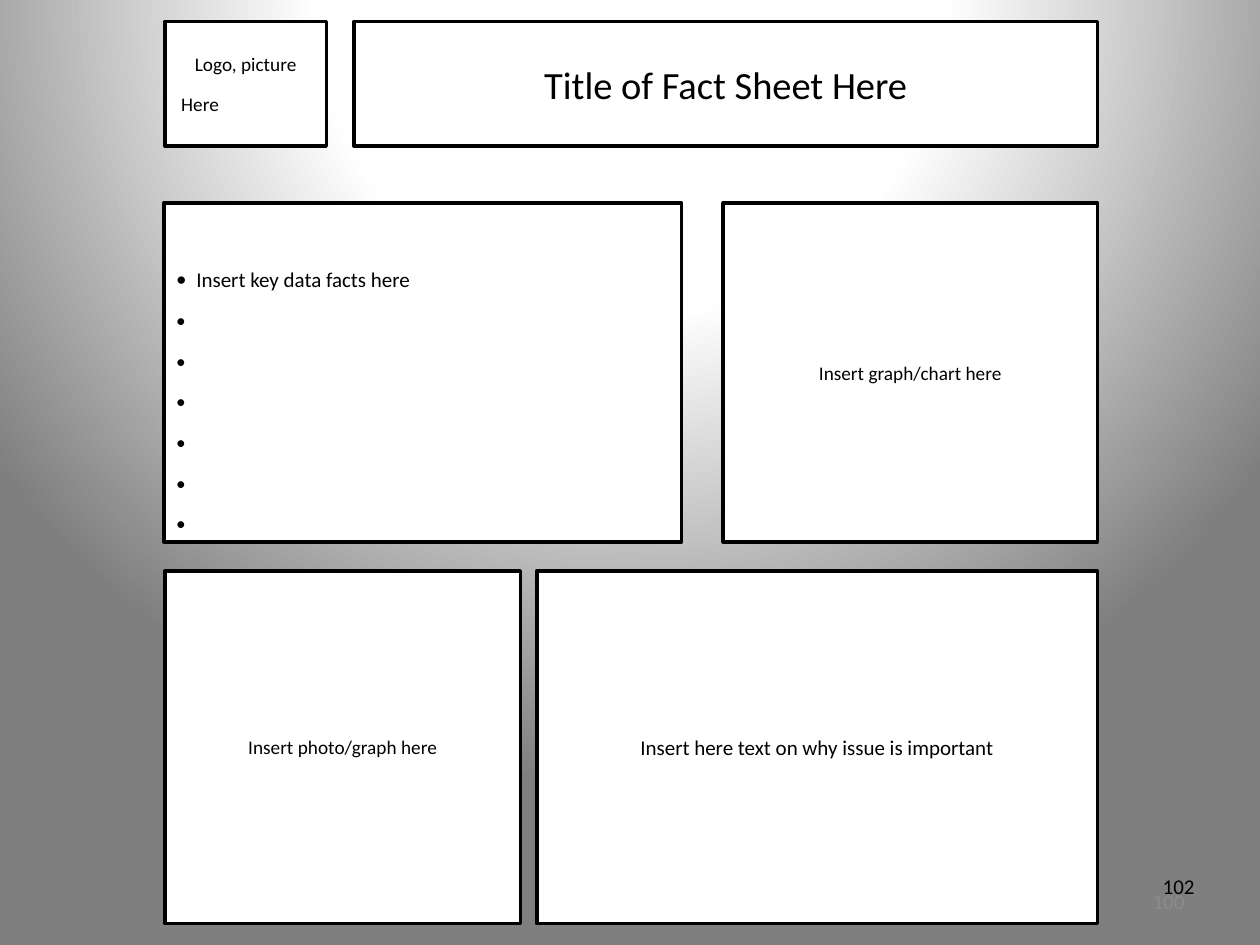
from dataclasses import dataclass
from lxml.etree import SubElement
from pptx import Presentation
from pptx.dml.color import RGBColor
from pptx.enum.shapes import MSO_SHAPE
from pptx.enum.text import MSO_ANCHOR, MSO_AUTO_SIZE, PP_ALIGN
from pptx.oxml import parse_xml
from pptx.oxml.ns import nsdecls, qn
from pptx.util import Inches, Pt


@dataclass(frozen=True)
class Theme:
    """Hold the colours, type sizes and line width."""
    font: str = "Calibri"
    ink: str = "000000"
    paper: str = "FFFFFF"
    faint: str = "8C8C8C"
    stops: tuple = ((0, "FFFFFF"), (40, "FEFEFE"), (100, "7F7F7F"))
    title: int = 22
    body: int = 12
    small: int = 11
    gap: int = 10
    line: int = 2


THEME = Theme()
WIDE, HIGH = Inches(10), Inches(7.5)
LEFT, RIGHT = 0.131, 0.871
HEAD, MID, FOOT = (0.0227, 0.132), (0.2147, 0.3587), (0.604, 0.3733)


def area(left, right, row):
    """Turn shares of the slide into a left, top, width and height."""
    top, tall = row
    return [round(n) for n in (left * WIDE, top * HIGH, (right - left) * WIDE, tall * HIGH)]


def paint(slide):
    """Fill the background with a round gradient centred above the slide."""
    slide.background.fill.solid()
    stops = "".join(
        f'<a:gs pos="{pos * 1000}"><a:srgbClr val="{tone}"/></a:gs>'
        for pos, tone in THEME.stops)
    grad = parse_xml(
        f'<a:gradFill {nsdecls("a")} rotWithShape="1"><a:gsLst>{stops}</a:gsLst>'
        '<a:path path="circle"><a:fillToRect l="50000" t="-80000" r="50000" b="180000"/>'
        '</a:path></a:gradFill>')
    back = slide.element.find(".//" + qn("p:bgPr"))
    back.replace(back[0], grad)


def style(shape):
    """Give a box its white fill and black outline."""
    shape.fill.solid()
    shape.fill.fore_color.rgb = RGBColor.from_string(THEME.paper)
    shape.line.color.rgb = RGBColor.from_string(THEME.ink)
    shape.line.width = Pt(THEME.line)


def setup(shape, anchor=MSO_ANCHOR.MIDDLE):
    """Prepare and return the text frame of a shape."""
    frame = shape.text_frame
    frame.word_wrap = True
    frame.auto_size = MSO_AUTO_SIZE.NONE
    frame.vertical_anchor = anchor
    return frame


def write(para, text, size, align=PP_ALIGN.CENTER, tone=THEME.ink, gap=THEME.gap):
    """Add one run to a paragraph and format both."""
    para.alignment = align
    para.space_after = Pt(gap)
    run = para.add_run()
    run.text = text
    run.font.name = THEME.font
    run.font.size = Pt(size)
    run.font.color.rgb = RGBColor.from_string(tone)


def panel(slide, left, right, row, anchor=MSO_ANCHOR.MIDDLE):
    """Draw an outlined panel and return its text frame."""
    shape = slide.shapes.add_shape(MSO_SHAPE.RECTANGLE, *area(left, right, row))
    shape.shadow.inherit = False
    style(shape)
    return setup(shape, anchor)


def indent(para, margin, hang=0):
    """Set the left margin and first line of a paragraph."""
    props = para._p.get_or_add_pPr()
    props.set("marL", str(Inches(margin)))
    props.set("indent", str(-Inches(hang)))
    return props


def facts(frame, items):
    """Write a bulleted list in which open items keep their bullet."""
    for num, text in enumerate(items):
        para = frame.add_paragraph() if num else frame.paragraphs[0]
        props = indent(para, 0.16, 0.16)
        SubElement(props, qn("a:buFont")).set("typeface", THEME.font)
        SubElement(props, qn("a:buChar")).set("char", "•")
        size = THEME.body if text.strip() else THEME.small
        write(para, text, size, PP_ALIGN.LEFT)


def number(slide, text, left, right, top, align, tone):
    """Place a page number."""
    box = slide.shapes.add_textbox(*area(left, right, (top, 0.0533)))
    write(setup(box).paragraphs[0], text, THEME.body, align, tone, 0)


def main():
    """Build the fact sheet."""
    deck = Presentation()
    deck.slide_width, deck.slide_height = WIDE, HIGH
    slide = deck.slides.add_slide(deck.slide_layouts[5])
    paint(slide)

    title = slide.shapes.title
    title.left, title.top, title.width, title.height = area(0.281, RIGHT, HEAD)
    style(title)
    write(setup(title).paragraphs[0], "Title of Fact Sheet Here", THEME.title)

    logo = panel(slide, LEFT, 0.259, HEAD)
    write(logo.paragraphs[0], "Logo, picture", THEME.small)
    here = logo.add_paragraph()
    indent(here, 0.03)
    write(here, "Here", THEME.small, PP_ALIGN.LEFT)

    facts(panel(slide, 0.13, 0.541, MID, MSO_ANCHOR.BOTTOM),
          ["Insert key data facts here"] + ["\N{NO-BREAK SPACE}"] * 6)

    for left, right, row, text, size in (
            (0.574, RIGHT, MID, "Insert graph/chart here", THEME.small),
            (0.426, RIGHT, FOOT, "Insert here text on why issue is important", THEME.body),
            (LEFT, 0.413, FOOT, "Insert photo/graph here", THEME.small)):
        write(panel(slide, left, right, row).paragraphs[0], text, size)

    number(slide, "100", 0.717, 0.95, 0.9267, PP_ALIGN.RIGHT, THEME.faint)
    number(slide, "102", 0.892, 0.979, 0.9107, PP_ALIGN.CENTER, THEME.ink)
    deck.save("out.pptx")


if __name__ == "__main__":
    main()
